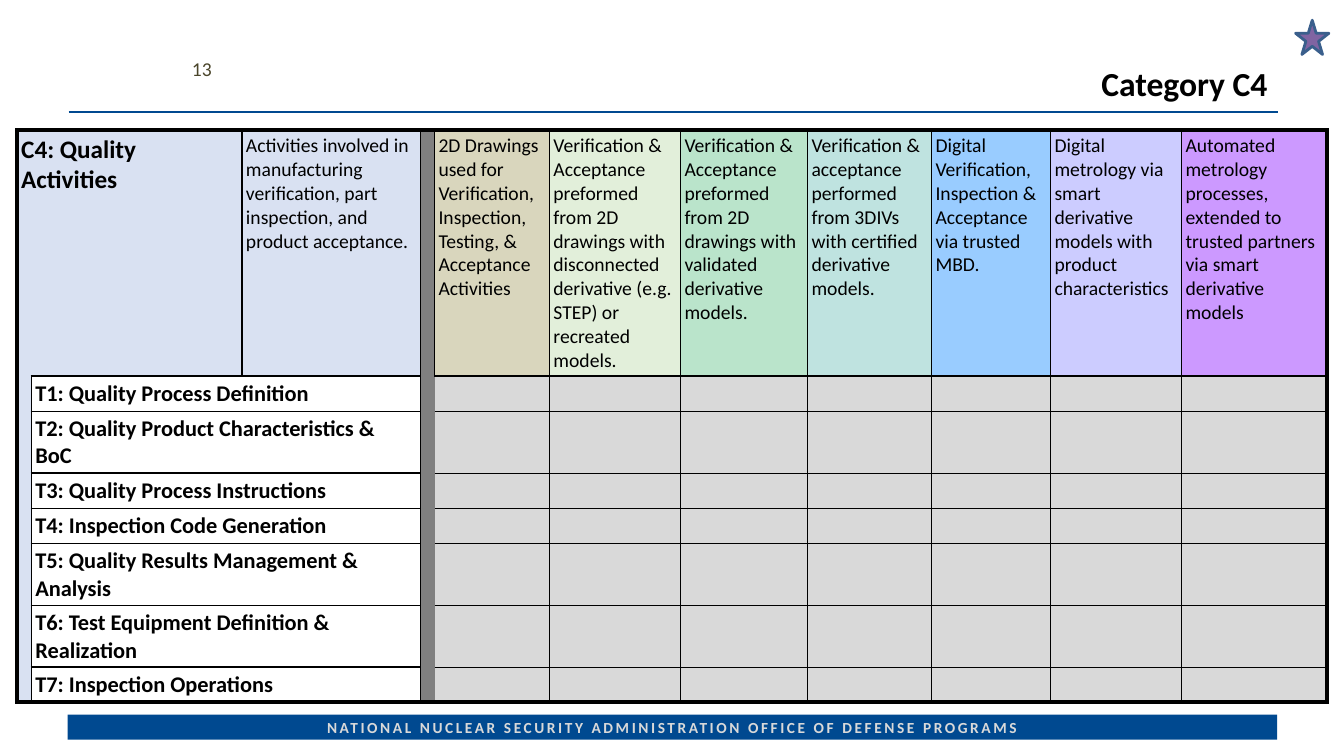
from lxml import etree
from pptx import Presentation
from pptx.dml.color import RGBColor
from pptx.enum.shapes import MSO_CONNECTOR, MSO_SHAPE
from pptx.enum.text import MSO_ANCHOR, PP_ALIGN
from pptx.oxml.ns import qn
from pptx.util import Inches, Pt

STRAIGHT = MSO_CONNECTOR.STRAIGHT
RECTANGLE, STAR = MSO_SHAPE.RECTANGLE, MSO_SHAPE.STAR_5_POINT
TOP, MIDDLE, BOTTOM = MSO_ANCHOR.TOP, MSO_ANCHOR.MIDDLE, MSO_ANCHOR.BOTTOM
LEFT, CENTER, RIGHT = PP_ALIGN.LEFT, PP_ALIGN.CENTER, PP_ALIGN.RIGHT

NAVY, BLACK, WHITE = "004990", "000000", "FFFFFF"
PALE_BLUE, DIVIDER_GREY, EMPTY_GREY = "D9E1F2", "808080", "D9D9D9"

CATEGORY = "C4: Quality Activities"
SCOPE = ("Activities involved in manufacturing verification, part inspection, "
         "and product acceptance.")
LEVELS = [
    ("2D Drawings used for Verification, Inspection, Testing, & Acceptance Activities", "D9D6BD"),
    ("Verification & Acceptance preformed from 2D drawings with disconnected "
     "derivative (e.g. STEP) or recreated models.", "E2EFDA"),
    ("Verification & Acceptance preformed from 2D drawings with validated "
     "derivative models.", "BAE4CB"),
    ("Verification & acceptance performed from 3DIVs with certified derivative models.", "BFE3E0"),
    ("Digital Verification, Inspection & Acceptance via trusted MBD.", "99CCFF"),
    ("Digital metrology via smart derivative models with product characteristics", "CCCCFF"),
    ("Automated metrology processes, extended to trusted partners via smart "
     "derivative models", "CC99FF"),
]
TASKS = [
    "T1: Quality Process Definition",
    "T2: Quality Product Characteristics & BoC",
    "T3: Quality Process Instructions",
    "T4: Inspection Code Generation",
    "T5: Quality Results Management & Analysis",
    "T6: Test Equipment Definition & Realization",
    "T7: Inspection Operations",
]
COLUMN_WEIGHTS = [0.14, 2.09, 1.77, 0.14, 1.14, 1.3, 1.26, 1.23, 1.18, 1.3, 1.44]
ROW_WEIGHTS = [2.44, 0.35, 0.35, 0.35, 0.35, 0.61, 0.61, 0.35]
DIVIDER = 3


def color(value):
    return RGBColor.from_string(value)


def horizontal_rule(line, column):
    """Width of the rule above row `line`, or None."""
    if line in (0, len(ROW_WEIGHTS)):
        return 3
    if column in (0, DIVIDER):
        return None
    if column < DIVIDER:
        return 1
    return 1.5 if line == 1 else 0.25


def vertical_rule(line, row):
    """Width of the rule left of column `line`, or None."""
    if line in (0, len(COLUMN_WEIGHTS)):
        return 3
    if row == 0:
        return {1: None, DIVIDER: 0.5, DIVIDER + 1: 0.5}.get(line, 1)
    return {1: 1, 2: None, DIVIDER: 1, DIVIDER + 1: None}.get(line, 0.25)


class SlideBuilder:
    """Places elements by percent of the slide's width and height."""

    font_name = "Calibri"

    def __init__(self, deck):
        self.deck = deck
        self.page = deck.slides.add_slide(deck.slide_layouts[6])

    def across(self, percent):
        return round(self.deck.slide_width * percent / 100)

    def down(self, percent):
        return round(self.deck.slide_height * percent / 100)

    def place(self, left, top, width, height):
        return self.across(left), self.down(top), self.across(width), self.down(height)

    def set_text(self, frame, words, size, ink, bold=False, align=LEFT, leading=None,
                 tracking=None):
        para = frame.paragraphs[0]
        para.alignment = align
        if leading:
            para.line_spacing = leading
        para.font.name, para.font.size, para.font.bold = self.font_name, Pt(size), bold
        para.font.color.rgb = color(ink)
        if words:
            span = para.add_run()
            span.text = words
            if tracking:
                span._r.get_or_add_rPr().set("spc", str(round(tracking * 100)))

    def shape(self, kind, area, fill, outline=None, width=0):
        box = self.page.shapes.add_shape(kind, *self.place(*area))
        box.shadow.inherit = False
        box.fill.solid()
        box.fill.fore_color.rgb = color(fill)
        if outline:
            box.line.color.rgb = color(outline)
            box.line.width = Pt(width)
        else:
            box.line.fill.background()
        return box

    def banner(self, words, area):
        frame = self.shape(RECTANGLE, area, NAVY).text_frame
        frame.margin_left = frame.margin_right = Inches(0.03)
        frame.margin_top = frame.margin_bottom = Inches(0.03)
        frame.vertical_anchor = MIDDLE
        self.set_text(frame, words, 11, EMPTY_GREY, bold=True, align=CENTER, tracking=1.8)

    def text(self, words, area, anchor, size, ink, **style):
        frame = self.page.shapes.add_textbox(*self.place(*area)).text_frame
        frame.word_wrap = True
        frame.vertical_anchor = anchor
        self.set_text(frame, words, size, ink, **style)

    def rule(self, left, right, top):
        line = self.page.shapes.add_connector(
            STRAIGHT, self.across(left), self.down(top), self.across(right), self.down(top))
        line.line.color.rgb = color(NAVY)
        line.line.width = Pt(1.5)
        etree.SubElement(line._element.spPr, qn("a:effectLst"))

    def table(self, area, column_weights, row_weights):
        left, top, width, height = self.place(*area)
        table = self.page.shapes.add_table(
            len(row_weights), len(column_weights), left, top, width, height).table
        table.first_row = table.horz_banding = False
        for column, weight in zip(table.columns, column_weights):
            column.width = round(width * weight / sum(column_weights))
        for row, weight in zip(table.rows, row_weights):
            row.height = round(height * weight / sum(row_weights))
        return table

    def cell(self, cell, words, fill, size=14, bold=False):
        cell.margin_left = cell.margin_right = Inches(0.04)
        cell.margin_top = cell.margin_bottom = Inches(0.04)
        cell.vertical_anchor = TOP
        self.set_text(cell.text_frame, words, size, BLACK, bold=bold)
        cell.fill.solid()
        cell.fill.fore_color.rgb = color(fill)

    def borders(self, cell, row, column):
        widths = {
            "a:lnL": vertical_rule(column, row),
            "a:lnR": vertical_rule(column + 1, row),
            "a:lnT": horizontal_rule(row, column),
            "a:lnB": horizontal_rule(row + 1, column),
        }
        properties = cell._tc.get_or_add_tcPr()
        for position, (tag, width) in enumerate(widths.items()):
            edge = etree.Element(qn(tag), w=str(Pt(width or 0)))
            if width:
                fill = etree.SubElement(edge, qn("a:solidFill"))
                etree.SubElement(fill, qn("a:srgbClr"), val=BLACK)
            else:
                etree.SubElement(edge, qn("a:noFill"))
            properties.insert(position, edge)


def add_maturity_table(builder):
    table = builder.table((1.28, 17.2, 97.45, 72.13), COLUMN_WEIGHTS, ROW_WEIGHTS)
    header = [(CATEGORY, PALE_BLUE, 18, True), ("", PALE_BLUE), (SCOPE, PALE_BLUE),
              ("", DIVIDER_GREY), *LEVELS]
    body = [[("", PALE_BLUE), (task, WHITE, 16, True), ("", WHITE), ("", DIVIDER_GREY)]
            + [("", EMPTY_GREY)] * len(LEVELS) for task in TASKS]
    for row, contents in enumerate([header, *body]):
        for column, content in enumerate(contents):
            cell = table.cell(row, column)
            builder.cell(cell, *content)
            builder.borders(cell, row, column)
        first = 1 if row else 0
        table.cell(row, first).merge(table.cell(row, first + 1))


def main():
    deck = Presentation()
    deck.slide_width, deck.slide_height = Inches(13.33), Inches(7.5)
    builder = SlideBuilder(deck)
    builder.banner("NATIONAL NUCLEAR SECURITY ADMINISTRATION OFFICE OF DEFENSE PROGRAMS",
                   (5.03, 94.53, 90, 3.33))
    builder.rule(5.1, 95.12, 14.8)
    builder.text("Category C4", (27.53, 2.4, 67.52, 12), BOTTOM, 24, BLACK,
                 bold=True, align=RIGHT, leading=0.85)
    add_maturity_table(builder)
    builder.text("13", (13.05, 6.4, 3.45, 5.33), MIDDLE, 14, "4A452A", align=RIGHT)
    builder.shape(STAR, (96.4, 2.67, 2.48, 4.53), "8064A2", "3A5F8C", 2)
    deck.save("out.pptx")


if __name__ == "__main__":
    main()
